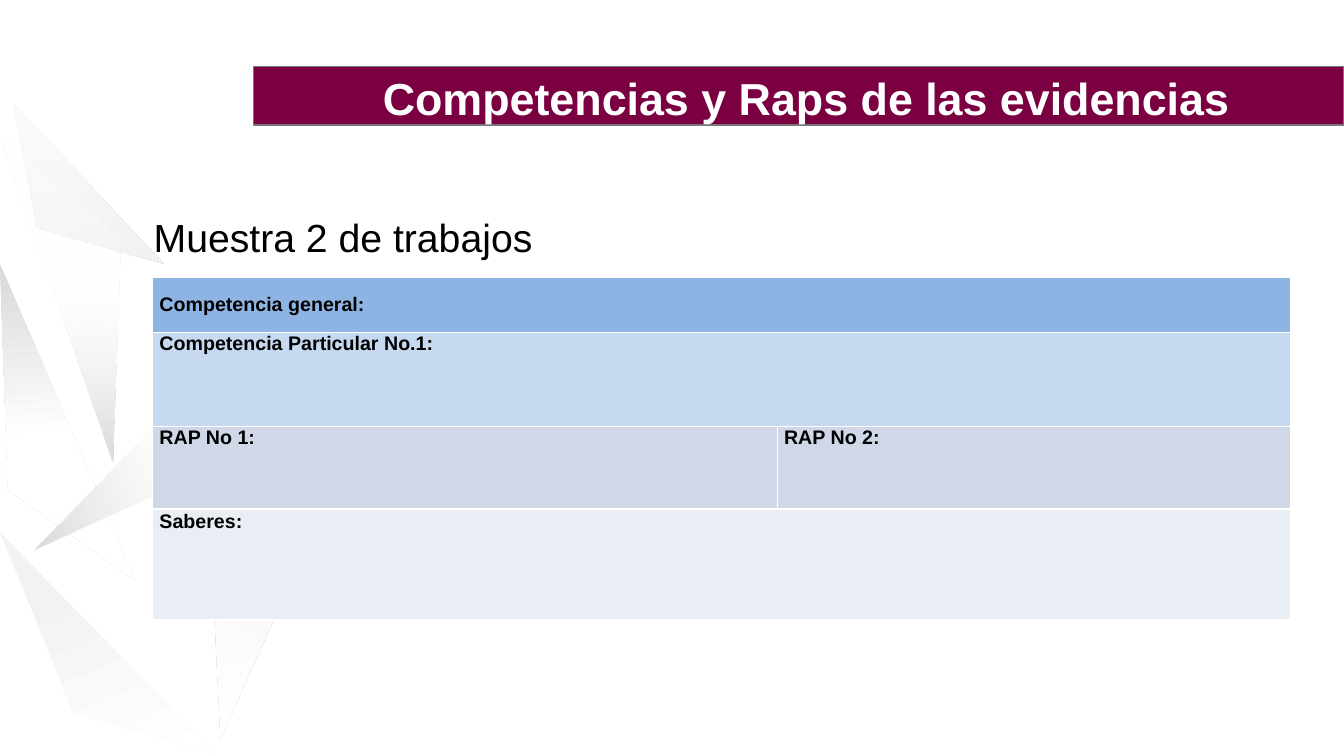
from lxml import etree
from pptx import Presentation
from pptx.dml.color import RGBColor
from pptx.enum import text
from pptx.oxml import ns
from pptx.util import Pt


def rgb(value):
    return RGBColor.from_string(value)


def style(p, size, color, bold=False):
    for r in p.runs:
        r.font.name = "Arial"
        r.font.size = Pt(size)
        r.font.bold = bold
        r.font.color.rgb = rgb(color)


prs = Presentation()
prs.slide_width, prs.slide_height = Pt(960), Pt(540)
s = prs.slides.add_slide(prs.slide_layouts[5])

facets = [
    ([(26.6, 162.7), (9.4, 74.2), (116.6, 187.9)], 349.6,
     [(19, "F2F2F2", 32), (97, "F2F2F2", 100)]),
    ([(86.4, 168.5), (80.6, 329.8), (0, 97.2)], 180,
     [(0, "D9D9D9", 100), (55, "FFFFFF", 27)]),
    ([(197.3, 437.8), (157.7, 527.8), (149.8, 366.5)], 204,
     [(19, "FFFFFF", 51), (97, "F2F2F2", 100)]),
    ([(5.8, 349.9), (0, 188.6), (96.5, 414.7)], 356,
     [(0, "D9D9D9", 100), (55, "FFFFFF", 100)]),
    ([(52.6, 509), (0, 380.2), (154.1, 538.6)], 338.4,
     [(25, "F2F2F2", 100), (100, "FFFFFF", 100)]),
    ([(170.6, 325.4), (24.5, 392.4), (195.8, 216.7)], 243.5,
     [(0, "D9D9D9", 100), (55, "FFFFFF", 43)]),
]
for points, turn, stops in facets:
    corners = [(Pt(x), Pt(y)) for x, y in points]
    builder = s.shapes.build_freeform(*corners[0])
    builder.add_line_segments(corners[1:], close=True)
    sp = builder.convert_to_shape()
    sp.shadow.inherit = False
    sp.line.fill.background()
    sp.fill.gradient()
    sp.fill.gradient_angle = (270 - turn) % 360
    for stop, (position, color, _) in zip(sp.fill.gradient_stops, stops):
        stop.position = position / 100
        stop.color.rgb = rgb(color)
    clrs = sp.element.spPr.findall(".//" + ns.qn("a:srgbClr"))
    for clr, (_, _, opacity) in zip(clrs, stops):
        if opacity < 100:
            etree.SubElement(clr, ns.qn("a:alpha"), val=str(opacity * 1000))

title = s.shapes.title
title.left, title.top, title.width, title.height = Pt(181.2), Pt(47.6), Pt(778.8), Pt(41.8)
title.fill.solid()
title.fill.fore_color.rgb = rgb("7B0041")
title.line.color.rgb = rgb("787878")
title.line.width = Pt(0.96)
tf = title.text_frame
tf.text = "Competencias y Raps de las evidencias"
tf.auto_size = text.MSO_AUTO_SIZE.NONE
tf.vertical_anchor = text.MSO_ANCHOR.TOP
tf.margin_left, tf.margin_top, tf.margin_right, tf.margin_bottom = Pt(92.2), Pt(2.9), 0, 0
tf.paragraphs[0].alignment = text.PP_ALIGN.LEFT
style(tf.paragraphs[0], 32, "FFFFFF", True)

tables = [
    (198, [813], [39.6, 69.8],
     [[("Competencia general:", "8EB4E3")],
      [("Competencia Particular No.1:", "C6D9F1")]]),
    (304.6, [446.2, 366.8], [59, 79.2],
     [[("RAP No 1:", "D0D8E8"), ("RAP No 2:", "D0D8E8")],
      [("Saberes:", "E9EDF4"), ("", "E9EDF4")]]),
]
for top, widths, heights, rows in tables:
    frame = s.shapes.add_table(len(heights), len(widths), Pt(108.9), Pt(top),
                               Pt(sum(widths)), Pt(sum(heights)))
    table = frame.table
    table.first_row = table.horz_banding = False
    for column, width in zip(table.columns, widths):
        column.width = Pt(width)
    for row, height, entries in zip(table.rows, heights, rows):
        row.height = Pt(height)
        for cell, (label, color) in zip(row.cells, entries):
            cell.margin_left = cell.margin_right = Pt(5)
            cell.margin_top = cell.margin_bottom = 0
            tcPr = cell._tc.get_or_add_tcPr()
            for side in ("L", "R", "T", "B"):
                ln = etree.SubElement(tcPr, ns.qn("a:ln" + side), w=str(Pt(1)))
                solid = etree.SubElement(ln, ns.qn("a:solidFill"))
                etree.SubElement(solid, ns.qn("a:srgbClr"), val="FFFFFF")
            cell.fill.solid()
            cell.fill.fore_color.rgb = rgb(color)
            if label:
                cell.text_frame.text = label
                style(cell.text_frame.paragraphs[0], 14, "000000", True)
            if label == "Competencia general:":
                cell.vertical_anchor = text.MSO_ANCHOR.MIDDLE
            if label == "Saberes:":
                p = cell.text_frame.paragraphs[0]
                p.line_spacing = 1.07
                p.space_after = Pt(8)
                cell.merge(row.cells[1])

sample = s.shapes.add_textbox(Pt(108.9), Pt(151.2), Pt(437.8), Pt(34.6))
tf = sample.text_frame
tf.word_wrap = True
tf.margin_left, tf.margin_top, tf.margin_right, tf.margin_bottom = Pt(0.9), Pt(0.9), 0, 0
tf.text = "Muestra 2 de trabajos"
tf.paragraphs[0].alignment = text.PP_ALIGN.JUSTIFY
style(tf.paragraphs[0], 28, "000000")

prs.save("out.pptx")
